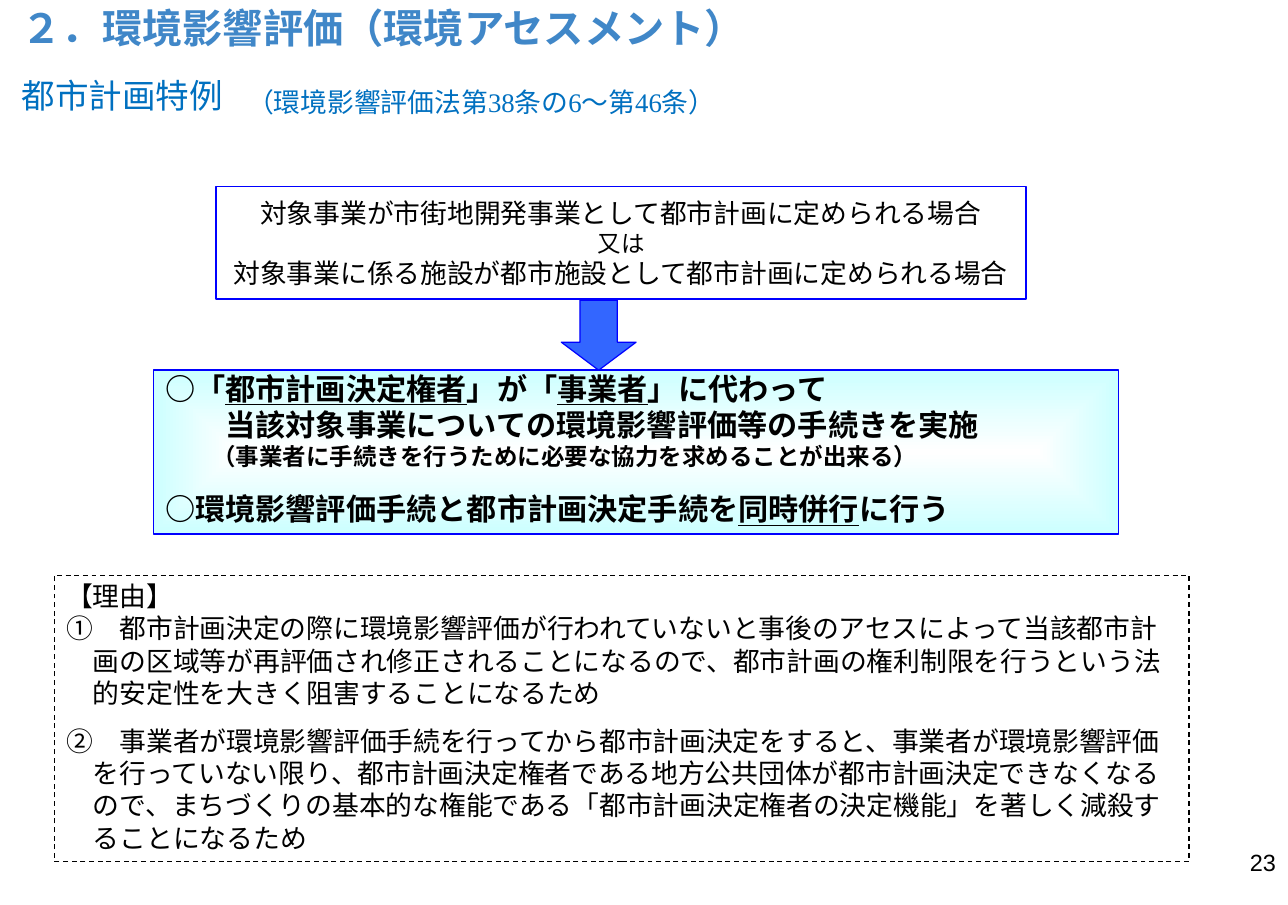
from lxml import etree
from pptx import Presentation
from pptx.dml.color import RGBColor
from pptx.enum.dml import MSO_LINE
from pptx.enum.shapes import MSO_SHAPE
from pptx.enum.text import MSO_ANCHOR, PP_ALIGN
from pptx.oxml.ns import qn
from pptx.util import Pt

LEFT, CENTER, RIGHT = PP_ALIGN.LEFT, PP_ALIGN.CENTER, PP_ALIGN.RIGHT
TOP, MIDDLE = MSO_ANCHOR.TOP, MSO_ANCHOR.MIDDLE
RECTANGLE, DOWN_ARROW = MSO_SHAPE.RECTANGLE, MSO_SHAPE.DOWN_ARROW
DASH = MSO_LINE.DASH

GOTHIC, SERIF, SANS = "Noto Sans CJK JP", "Times New Roman", "Arial"
COLORS = {
    "black": "000000",
    "white": "FFFFFF",
    "title": "4087C8",
    "heading": "0070C0",
    "border": "0000FF",
    "arrow": "3366FF",
    "pale": "CCFFFF",
}


def color(name):
    return RGBColor.from_string(COLORS[name])


class SlideBuilder:
    def __init__(self, slide):
        self.slide = slide

    def shape(self, kind, bounds, line="border", fill=None, dash=None):
        shape = self.slide.shapes.add_shape(kind, *map(Pt, bounds))
        shape.shadow.inherit = False
        shape.line.color.rgb = color(line)
        shape.line.width = Pt(0.75)
        if dash:
            shape.line.dash_style = dash
        if fill:
            shape.fill.solid()
            shape.fill.fore_color.rgb = color(fill)
        else:
            shape.fill.background()
        return shape

    def glow(self, shape, inner, outer):
        """Fill the shape with a gradient that runs from its centre to its edges."""
        shape.fill.gradient()
        for stop, name in zip(shape.fill.gradient_stops, (inner, outer)):
            stop.color.rgb = color(name)
        gradient = shape._element.spPr.find(qn("a:gradFill"))
        gradient.remove(gradient.find(qn("a:lin")))
        direction = etree.SubElement(gradient, qn("a:path"), path="shape")
        etree.SubElement(direction, qn("a:fillToRect"), l="50000", t="50000", r="50000", b="50000")

    def frame(self, shape, side=7.2, edge=3.6, anchor=TOP):
        frame = shape.text_frame
        frame.word_wrap = True
        frame.vertical_anchor = anchor
        frame.margin_left = frame.margin_right = Pt(side)
        frame.margin_top = frame.margin_bottom = Pt(edge)
        return frame

    def paragraph(self, frame, text, size, font=GOTHIC, ink="black", bold=False,
                  align=LEFT, before=0, margin=0, indent=0):
        """Add a paragraph; every second part between bars is underlined."""
        first = frame.paragraphs[0]
        paragraph = first if not first.runs else frame.add_paragraph()
        paragraph.alignment = align
        if before:
            paragraph.space_before = Pt(before)
        properties = paragraph._p.get_or_add_pPr()
        properties.set("marL", str(Pt(margin)))
        properties.set("indent", str(Pt(indent)))
        paragraph.font.size = Pt(size)
        paragraph.font.bold = bold
        paragraph.font.name = font
        paragraph.font.color.rgb = color(ink)
        etree.SubElement(properties.find(qn("a:defRPr")), qn("a:ea"), typeface=GOTHIC)
        for index, part in enumerate(text.split("|")):
            run = paragraph.add_run()
            run.text = part
            if index % 2:
                run.font.underline = True

    def label(self, bounds, text, size, anchor=TOP, **style):
        box = self.slide.shapes.add_textbox(*map(Pt, bounds))
        self.paragraph(self.frame(box, anchor=anchor), text, size, **style)


def main():
    presentation = Presentation()
    presentation.slide_width, presentation.slide_height = Pt(768.25), Pt(540)
    builder = SlideBuilder(presentation.slides.add_slide(presentation.slide_layouts[6]))

    reasons = builder.frame(builder.shape(RECTANGLE, (32.4, 343.2, 676.8, 170.8), "black", dash=DASH), edge=2.9)
    builder.paragraph(reasons, "【理由】", 16)
    for text, before in (
        ("①　都市計画決定の際に環境影響評価が行われていないと事後のアセスによって当該都市計"
         "画の区域等が再評価され修正されることになるので、都市計画の権利制限を行うという法"
         "的安定性を大きく阻害することになるため", 0),
        ("②　事業者が環境影響評価手続を行ってから都市計画決定をすると、事業者が環境影響評価"
         "を行っていない限り、都市計画決定権者である地方公共団体が都市計画決定できなくなる"
         "ので、まちづくりの基本的な権能である「都市計画決定権者の決定機能」を著しく減殺す"
         "ることになるため", 9.6),
    ):
        builder.paragraph(reasons, text, 16, before=before, margin=16, indent=-16)

    builder.label((608.4, 496.5, 159.8, 36), "23", 14, MIDDLE, font=SANS, align=RIGHT)

    cases = builder.frame(builder.shape(RECTANGLE, (128.9, 111.4, 483.1, 67)), edge=5.8)
    for text, size in (
        ("対象事業が市街地開発事業として都市計画に定められる場合", 16),
        ("又は", 14),
        ("対象事業に係る施設が都市施設として都市計画に定められる場合", 16),
    ):
        builder.paragraph(cases, text, size, align=CENTER)

    result = builder.shape(RECTANGLE, (91.4, 220.8, 576, 97.9))
    builder.glow(result, "white", "pale")
    rules = builder.frame(result, edge=0)
    for text, size, margin, before in (
        ("○「|都市計画決定権者|」が「|事業者|」に代わって", 18, 0, 0),
        ("当該対象事業についての環境影響評価等の手続きを実施", 18, 36, 0),
        ("（事業者に手続きを行うために必要な協力を求めることが出来る）", 14, 28, 0),
        ("○環境影響評価手続と都市計画決定手続を|同時併行|に行う", 18, 0, 12),
    ):
        builder.paragraph(rules, text, size, bold=True, margin=margin, before=before)

    arrow = builder.shape(DOWN_ARROW, (334.8, 179.1, 44.6, 41.8), fill="arrow")
    arrow.adjustments[0], arrow.adjustments[1] = 0.5, 0.4

    builder.label((140.4, 47.5, 300.2, 26.6), "（環境影響評価法第38条の6～第46条）", 16, font=SERIF, ink="heading")
    builder.label((5.8, -1.4, 551.5, 37.4), "２．環境影響評価（環境アセスメント）", 24, ink="title", bold=True)
    builder.label((5.8, 41, 180, 37.4), "都市計画特例", 20, ink="heading")

    presentation.save("out.pptx")


if __name__ == "__main__":
    main()
